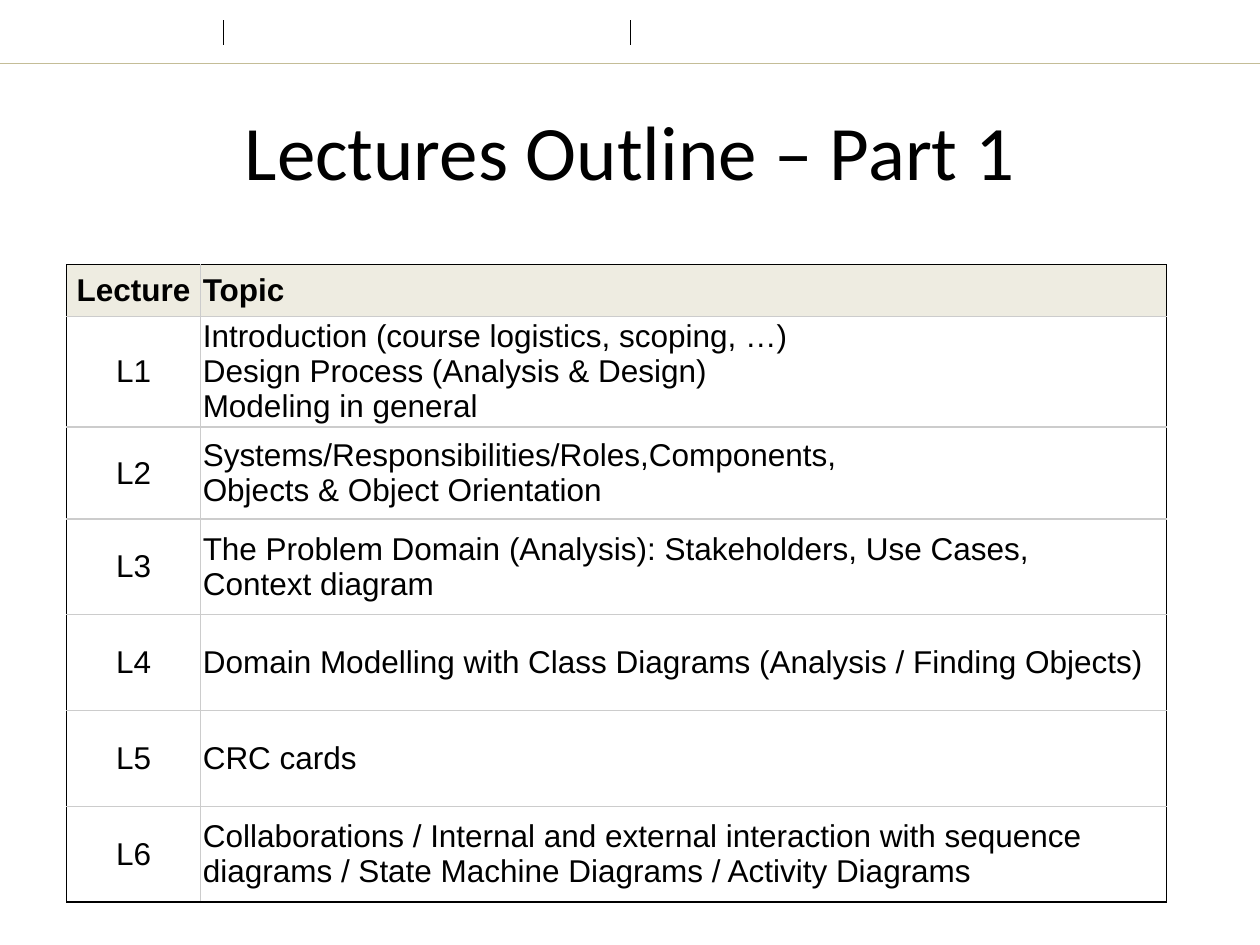
import pptx
import pptx.util
import pptx.dml.color
import pptx.enum.shapes
import pptx.enum.text
import pptx.oxml
import pptx.oxml.ns
from lxml import etree

Inches = pptx.util.Inches
Pt = pptx.util.Pt
CENTER = pptx.enum.text.PP_ALIGN.CENTER
LEFT = pptx.enum.text.PP_ALIGN.LEFT
MIDDLE = pptx.enum.text.MSO_ANCHOR.MIDDLE
BLACK, GRAY, HEADER_FILL, RULE = "000000", "CCCCCC", "EEECE1", "C4BD97"


def color(value):
    return pptx.dml.color.RGBColor.from_string(value)


def add_border(cell, side, value):
    """Draw one side (L, R, T or B) of a table cell."""
    cell._tc.get_or_add_tcPr().append(pptx.oxml.parse_xml(
        f'<a:ln{side} {pptx.oxml.ns.nsdecls("a")} w="{Pt(0.75)}">'
        f'<a:solidFill><a:srgbClr val="{value}"/></a:solidFill></a:ln{side}>'))


deck = pptx.Presentation()
deck.slide_width, deck.slide_height = Inches(10), Inches(7.5)
page = deck.slides.add_slide(deck.slide_layouts[5])

# Header rule and its two tick marks
header_lines = [
    (0, 0.5, 10, 0.5, RULE, 0.25),
    (1.77, 0.16, 1.77, 0.36, BLACK, 0.5),
    (5, 0.16, 5, 0.36, BLACK, 0.5),
]
for x1, y1, x2, y2, line_color, width in header_lines:
    line = page.shapes.add_connector(
        pptx.enum.shapes.MSO_CONNECTOR.STRAIGHT,
        Inches(x1), Inches(y1), Inches(x2), Inches(y2))
    line.line.color.rgb = color(line_color)
    line.line.width = Pt(width)
    etree.SubElement(line._element.spPr, pptx.oxml.ns.qn("a:effectLst"))

# Title
title = page.shapes.title
title_place = {"left": 0.5, "top": 0.5, "width": 9, "height": 1.38}
for name, value in title_place.items():
    setattr(title, name, Inches(value))
title.text_frame.text = "Lectures Outline – Part 1"
title.text_frame.vertical_anchor = MIDDLE
para = title.text_frame.paragraphs[0]
para.alignment = CENTER
for name, value in {"name": "Calibri", "size": Pt(44)}.items():
    setattr(para.font, name, value)
para.font.color.rgb = color(BLACK)

# Lecture table; \v is a line break inside a paragraph
topics = [
    "Introduction (course logistics, scoping, …)\v"
    "Design Process (Analysis & Design)\vModeling in general",
    "Systems/Responsibilities/Roles,Components,\vObjects & Object Orientation",
    "The Problem Domain (Analysis): Stakeholders, Use Cases,\vContext diagram",
    "Domain Modelling with Class Diagrams (Analysis / Finding Objects)",
    "CRC cards",
    "Collaborations / Internal and external interaction with sequence "
    "diagrams / State Machine Diagrams / Activity Diagrams",
]
rows = [("Lecture", "Topic")]
rows += [(f"L{number}", topic) for number, topic in enumerate(topics, 1)]
row_heights = [0.41, 0.76, 0.73] + [0.76] * 4
column_widths = [1.06, 7.67]

table = page.shapes.add_table(
    len(rows), 2, Inches(0.53), Inches(2.1),
    Inches(sum(column_widths)), Inches(sum(row_heights))).table
table.first_row = table.horz_banding = False
for column, width in zip(table.columns, column_widths):
    column.width = Inches(width)

cell_format = {"vertical_anchor": MIDDLE}
cell_format.update({f"margin_{side}": Inches(0.02)
                    for side in ("left", "right", "top", "bottom")})
last_row = len(rows) - 1
for r, texts in enumerate(rows):
    table.rows[r].height = Inches(row_heights[r])
    for c, text in enumerate(texts):
        cell = table.cell(r, c)
        cell.text = text
        for name, value in cell_format.items():
            setattr(cell, name, value)
        para = cell.text_frame.paragraphs[0]
        para.alignment = CENTER if c == 0 else LEFT
        for span in para.runs:
            font_format = {"name": "Arial", "size": Pt(18), "bold": r == 0}
            for name, value in font_format.items():
                setattr(span.font, name, value)
            span.font.color.rgb = color(BLACK)
        # Outer edges are black, inner ones gray
        outer = {"L": c == 0, "R": c == 1, "T": r == 0, "B": r == last_row}
        for side, is_outer in outer.items():
            add_border(cell, side, BLACK if is_outer else GRAY)
        if r == 0:
            cell.fill.solid()
            cell.fill.fore_color.rgb = color(HEADER_FILL)
        else:
            cell.fill.background()

deck.save("out.pptx")
